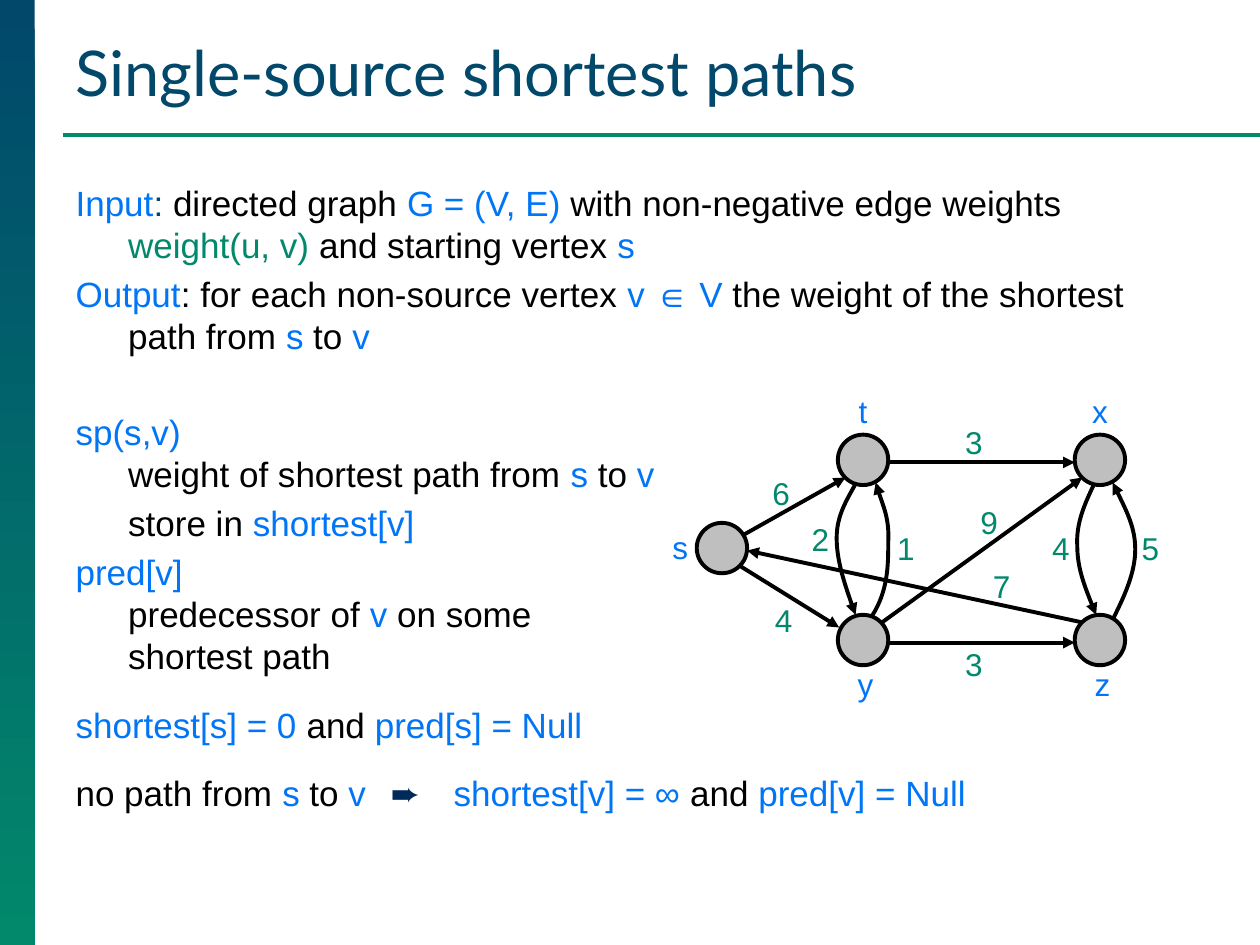
from lxml.etree import SubElement
from pptx import Presentation
from pptx.dml.color import RGBColor as Rgb
from pptx.enum.shapes import MSO_CONNECTOR as Connector, MSO_SHAPE as Preset
from pptx.enum.text import MSO_ANCHOR as Anchor, MSO_AUTO_SIZE as AutoSize, PP_ALIGN as Align
from pptx.oxml.ns import qn
from pptx.util import Inches, Pt

COLORS = {"navy": "01486B", "green": "02886B", "blue": "0075F6", "black": "000000",
          "arrow": "002A58", "vertex": "BFBFBF"}
WIDTH, HEIGHT = Inches(10), Inches(7.5)
COLUMNS, ROWS = 100, 75
RADIUS = 2
HANG = 4.17

VERTICES = {"s": (57.3, 43.5), "t": (68.5, 36.5), "x": (87.3, 36.5),
            "y": (68.5, 50.8), "z": (87.3, 50.8)}
LABEL_OFFSETS = {"s": (-3.3, 0), "t": (0, -3.85), "x": (0, -3.85),
                 "y": (0.2, 3.55), "z": (0.2, 3.55)}
STRAIGHT_EDGES = [
    ((59.1, 42.4), (67.1, 37.9)), ((70.5, 36.7), (85.3, 36.7)),
    ((70.5, 51), (85.3, 51)), ((70, 49.4), (85.9, 37.9)),
    ((85.9, 49.4), (59.3, 43.7)), ((58.7, 44.9), (66.6, 49.8)),
]
CURVED_EDGES = [
    [(69.2, 48.9), (70.5, 46.9), (70.5, 44.8), (70.5, 43), (70.6, 41.2), (69.7, 39.1), (69.5, 38.3)],
    [(67.9, 38.4), (67.2, 39.7), (66.4, 40.9), (66.4, 42.7), (66.4, 44.4), (67.1, 46.6), (67.9, 48.8)],
    [(88.4, 49), (89.3, 47.2), (90.1, 45.4), (90.1, 43.6), (90.1, 41.9), (89.2, 40.1), (88.3, 38.3)],
    [(86.8, 38.5), (86.1, 40), (85.4, 41.5), (85.5, 43.3), (85.5, 45), (86.2, 46.9), (87, 48.8)],
]
WEIGHTS = [("6", 62, 39.15), ("4", 62.2, 49.25), ("3", 77.3, 35.15), ("3", 77.3, 52.75),
           ("4", 84.2, 43.55), ("5", 91.3, 43.55), ("1", 71.9, 43.55), ("2", 65.1, 42.85),
           ("7", 79.5, 46.55), ("9", 78.5, 41.45)]

HANGING, INDENTED, FLUSH = (HANG, -HANG), (HANG, 0), (0, 0)
ARROW_TABS = (24.7, 28.4)
PARAGRAPHS = [
    (0, HANGING, (), [
        ("Input", "blue"), (":", "navy"), (" directed graph ", "black"), ("G = (V, E) ", "blue"),
        ("with non-negative edge weights ", "black"), ("weight(u, v) ", "green"),
        ("and starting vertex ", "black"), ("s", "blue")]),
    (4, HANGING, (), [
        ("Output", "blue"), (": for each non-source vertex ", "black"), ("v ∈ V ", "blue"),
        ("the weight of the shortest path from ", "black"), ("s", "blue"), (" to ", "black"),
        ("v", "blue")]),
    (31, HANGING, (), [
        ("sp(s,v)\n", "blue"), ("weight of shortest path from ", "black"), ("s", "blue"),
        (" to ", "black"), ("v", "blue")]),
    (4, INDENTED, (), [("store in ", "black"), ("shortest[v]", "blue")]),
    (4, HANGING, (), [
        ("pred[v]\n", "blue"), ("predecessor of ", "black"), ("v", "blue"),
        (" on some\n", "black"), ("shortest path", "black")]),
    (15, HANGING, (), [
        ("shortest[s] = 0", "blue"), (" and ", "black"), ("pred[s] = Null", "blue")]),
    (15, FLUSH, ARROW_TABS, [
        ("no path from ", "black"), ("s", "blue"), (" to ", "black"), ("v\t", "blue"),
        ("➨\t", "arrow"), ("shortest[v] = ∞ ", "blue"), ("and ", "black"),
        ("pred[v] = Null", "blue")]),
]


def col(count):
    return round(WIDTH * count / COLUMNS)


def row(count):
    return round(HEIGHT * count / ROWS)


def color(name):
    return Rgb.from_string(COLORS[name])


def place(part, left, top, width, height):
    part.left, part.top, part.width, part.height = col(left), row(top), col(width), row(height)


def add_run(paragraph, text, tint, size, face="Arial"):
    run = paragraph.add_run()
    run.text = text.rstrip("\n")
    run.font.size, run.font.name = Pt(size), face
    run.font.color.rgb = color(tint)
    if text.endswith("\n"):
        paragraph.add_line_break()


def style_stroke(stroke, tint="black", arrow=False):
    stroke.line.color.rgb = color(tint)
    stroke.line.width = Pt(2.25)
    if arrow:
        SubElement(stroke.element.spPr.find(qn("a:ln")), qn("a:tailEnd"), type="triangle")


def add_line(shapes, start, end, tint="black", arrow=False):
    line = shapes.add_connector(Connector.STRAIGHT, col(start[0]), row(start[1]),
                                col(end[0]), row(end[1]))
    style_stroke(line, tint, arrow)
    SubElement(line.element.spPr, qn("a:effectLst"))


def add_curve(shapes, points):
    start, *rest = [(col(x), row(y)) for x, y in points]
    builder = shapes.build_freeform(*start)
    builder.add_line_segments(rest, close=False)
    curve = builder.convert_to_shape()
    path = next(curve.element.iter(qn("a:path")))
    segments = path.findall(qn("a:lnTo"))
    for first in range(0, len(segments), 3):
        bezier = SubElement(path, qn("a:cubicBezTo"))
        for segment in segments[first:first + 3]:
            bezier.append(segment[0])
            path.remove(segment)
    curve.fill.background()
    curve.shadow.inherit = False
    style_stroke(curve, arrow=True)


def add_vertex(shapes, x, y):
    vertex = shapes.add_shape(Preset.OVAL, col(x - RADIUS), row(y - RADIUS),
                              col(2 * RADIUS), row(2 * RADIUS))
    vertex.shadow.inherit = False
    vertex.fill.solid()
    vertex.fill.fore_color.rgb = color("vertex")
    style_stroke(vertex)


def add_label(shapes, text, x, y, tint):
    width, height = 3.4, 4.1
    label = shapes.add_textbox(col(x - width / 2), row(y - height / 2), col(width), row(height))
    label.text_frame.word_wrap = False
    paragraph = label.text_frame.paragraphs[0]
    paragraph.alignment = Align.CENTER
    add_run(paragraph, text, tint, 18)


def add_side_band(shapes):
    band = shapes.add_shape(Preset.RECTANGLE, 0, 0, col(2.75), HEIGHT)
    band.shadow.inherit = False
    band.line.fill.background()
    band.fill.gradient()
    band.fill.gradient_angle = 270
    for stop, tint in zip(band.fill.gradient_stops, ("navy", "green")):
        stop.color.rgb = color(tint)


def fill_title(title):
    place(title, 5, 2.1, 92.8, 7.1)
    frame = title.text_frame
    frame.auto_size, frame.vertical_anchor = AutoSize.NONE, Anchor.BOTTOM
    frame.paragraphs[0].alignment = Align.LEFT
    add_run(frame.paragraphs[0], "Single-source shortest paths", "navy", 36, "Lato")


def fill_body(body):
    place(body, 5, 13.9, 90.5, 55.1)
    frame = body.text_frame
    frame.auto_size = AutoSize.NONE
    for index, (before, (margin, indent), tabs, runs) in enumerate(PARAGRAPHS):
        paragraph = frame.add_paragraph() if index else frame.paragraphs[0]
        properties = paragraph._p.get_or_add_pPr()
        properties.set("marL", str(col(margin)))
        properties.set("indent", str(col(indent)))
        SubElement(properties, qn("a:buNone"))
        if tabs:
            stops = SubElement(properties, qn("a:tabLst"))
            for stop in tabs:
                SubElement(stops, qn("a:tab"), pos=str(col(stop)), algn="l")
        paragraph.space_before = Pt(before)
        for text, tint in runs:
            add_run(paragraph, text, tint, 20)


def draw_graph(shapes):
    for name, (x, y) in VERTICES.items():
        add_vertex(shapes, x, y)
        shift_x, shift_y = LABEL_OFFSETS[name]
        add_label(shapes, name, x + shift_x, y + shift_y, "blue")
    for start, end in STRAIGHT_EDGES:
        add_line(shapes, start, end, arrow=True)
    for points in CURVED_EDGES:
        add_curve(shapes, points)
    for weight, x, y in WEIGHTS:
        add_label(shapes, weight, x, y, "green")


def main():
    deck = Presentation()
    deck.slide_width, deck.slide_height = WIDTH, HEIGHT
    slide = deck.slides.add_slide(deck.slide_layouts[1])
    add_side_band(slide.shapes)
    add_line(slide.shapes, (5, 10.7), (COLUMNS, 10.7), "green")
    fill_title(slide.shapes.title)
    fill_body(slide.placeholders[1])
    draw_graph(slide.shapes.add_group_shape().shapes)
    deck.save("out.pptx")


if __name__ == "__main__":
    main()
